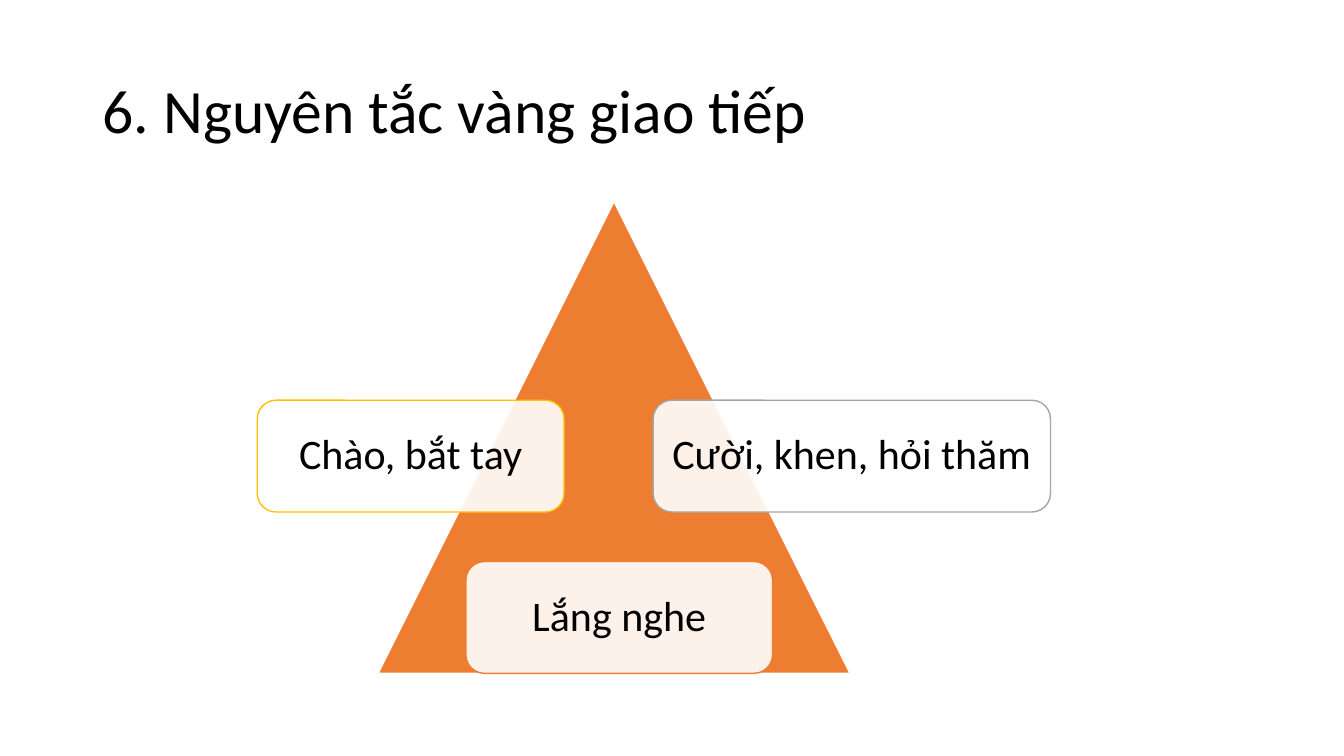
from lxml import etree
from pptx import Presentation
from pptx.dml.color import RGBColor
from pptx.enum.shapes import MSO_SHAPE
from pptx.enum.text import MSO_ANCHOR, PP_ALIGN
from pptx.oxml.ns import qn
from pptx.util import Inches, Pt

TRIANGLE = MSO_SHAPE.ISOSCELES_TRIANGLE
ROUNDED = MSO_SHAPE.ROUNDED_RECTANGLE
MIDDLE = MSO_ANCHOR.MIDDLE
LEFT, CENTER = PP_ALIGN.LEFT, PP_ALIGN.CENTER

WIDTH, HEIGHT = 13.33, 7.5
FONT = "Calibri"
BLACK, WHITE, ORANGE, GRAY, GOLD = "000000", "FFFFFF", "ED7D31", "A5A5A5", "FFC000"

# Text, outline, and left, top, width as shares of the triangle's side
PRINCIPLES = [
    ("Lắng nghe", ORANGE, 0.186, 0.763, 0.65),
    ("Cười, khen, hỏi thăm", GRAY, 0.583, 0.421, 0.842),
    ("Chào, bắt tay", GOLD, -0.256, 0.421, 0.65),
]
CARD_HEIGHT = 0.237


def color(value):
    return RGBColor.from_string(value)


def write(shape, text, size, align):
    frame = shape.text_frame
    frame.word_wrap = True
    frame.vertical_anchor = MIDDLE
    para = frame.paragraphs[0]
    para.text = text
    para.alignment = align
    para.line_spacing = 0.9
    para.font.name = FONT
    para.font.size = Pt(size)
    para.font.color.rgb = color(BLACK)


def add_block(page, kind, box, fill, outline, opacity=100):
    shape = page.shapes.add_shape(kind, *map(Inches, box))
    shape.shadow.inherit = False
    shape.fill.solid()
    shape.fill.fore_color.rgb = color(fill)
    shape.line.color.rgb = color(outline)
    shape.line.width = Pt(1)
    if opacity < 100:
        tint = shape.fill._xPr.find(qn("a:solidFill"))[0]
        etree.SubElement(tint, qn("a:alpha"), val=str(opacity * 1000))
    return shape


def add_title(page, box, text):
    title = page.shapes.add_textbox(*map(Inches, box))
    write(title, text, 44, LEFT)


def add_pyramid(page, left, top, side):
    add_block(page, TRIANGLE, (left, top, side, side), ORANGE, WHITE)
    # Translucent cards over the triangle
    for text, outline, across, down, width in PRINCIPLES:
        box = (left + across * side, top + down * side,
               width * side, CARD_HEIGHT * side)
        card = add_block(page, ROUNDED, box, WHITE, outline, opacity=90)
        write(card, text, 30, CENTER)


def main():
    deck = Presentation()
    deck.slide_width, deck.slide_height = Inches(WIDTH), Inches(HEIGHT)
    page = deck.slides.add_slide(deck.slide_layouts[6])
    add_title(page, (0.92, 0.4, 11.5, 1.45), "6. Nguyên tắc vàng giao tiếp")
    add_pyramid(page, left=3.75, top=2, side=4.68)
    deck.save("out.pptx")


if __name__ == "__main__":
    main()
